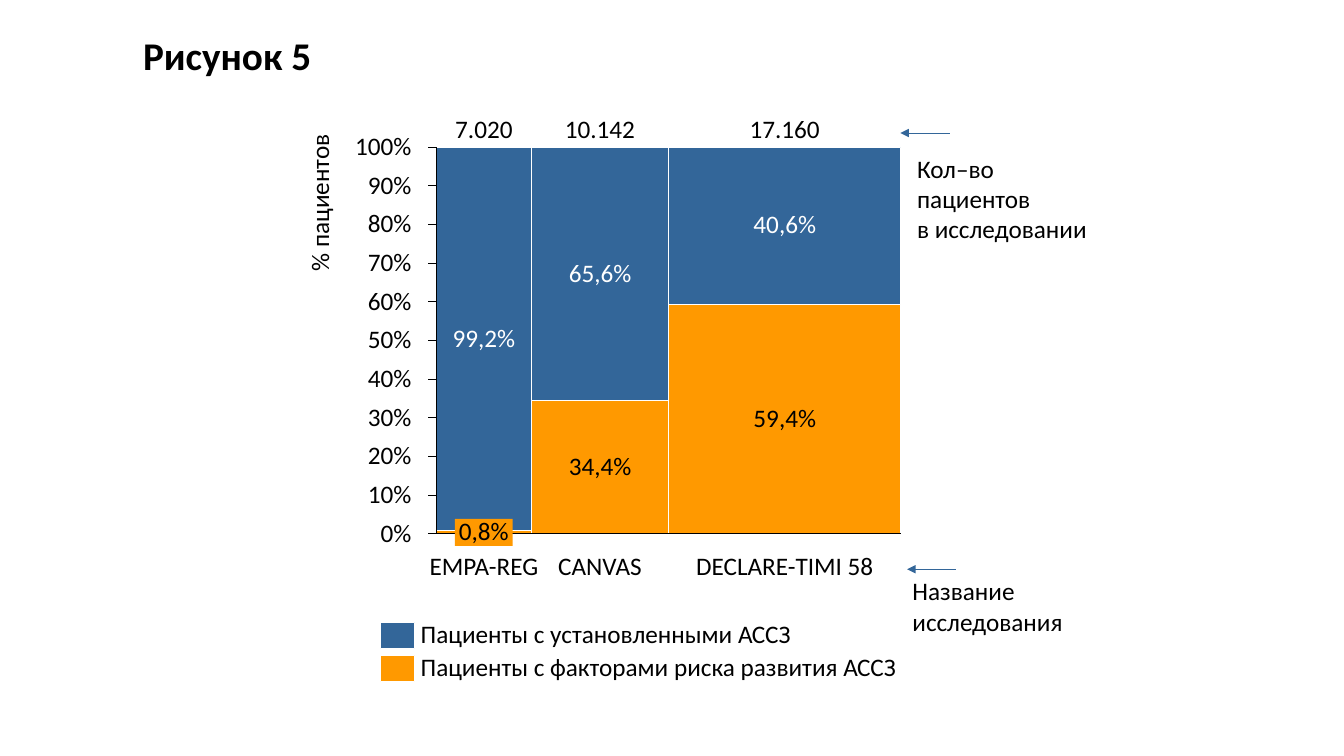
from dataclasses import dataclass

import pptx
import pptx.dml.color
import pptx.enum.shapes
import pptx.enum.text
import pptx.oxml.ns
import pptx.util
from lxml import etree

ALIGN = pptx.enum.text.PP_ALIGN
ANCHOR = pptx.enum.text.MSO_ANCHOR
qn = pptx.oxml.ns.qn

SLIDE_W = pptx.util.Inches(13.33)
SLIDE_H = pptx.util.Inches(7.5)


@dataclass(frozen=True)
class Theme:
    font: str = "Calibri"
    title_size: int = 28
    text_size: int = 18
    spacing: float = 0.9
    established: str = "336699"
    risk: str = "FF9900"
    ink: str = "000000"
    paper: str = "FFFFFF"
    thin: float = 0.5
    hairline: float = 0.75


THEME = Theme()

# Plot area and label sizes, in percent of the slide's width and height
PLOT_LEFT, PLOT_RIGHT = 32.47, 67.03
PLOT_TOP, PLOT_BOTTOM = 19.47, 70.63
PLOT_W, PLOT_H = PLOT_RIGHT - PLOT_LEFT, PLOT_BOTTOM - PLOT_TOP
TICK_LEFT, TICK_LABEL_RIGHT = 31.87, 30.62
ROW_H = 3.6
VALUE_W = 5.2

# Study, its label width, patients, share with risk factors, total label width
STUDIES = [
    ("EMPA-REG", 8.6, 7020, 0.8, 4.8),
    ("CANVAS", 7, 10142, 34.4, 5.8),
    ("DECLARE-TIMI 58", 14, 17160, 59.4, 5.8),
]


def across(share):
    return round(SLIDE_W * share / 100)


def down(share):
    return round(SLIDE_H * share / 100)


def box(left, top, width, height):
    return across(left), down(top), across(width), down(height)


def rgb(colour):
    return pptx.dml.color.RGBColor.from_string(colour)


def style(frame, color, align, size=THEME.text_size, spacing=THEME.spacing, bold=False):
    for paragraph in frame.paragraphs:
        paragraph.alignment = align
        paragraph.line_spacing = spacing
        for run in paragraph.runs:
            run.font.name = THEME.font
            run.font.size = pptx.util.Pt(size)
            run.font.bold = bold
            run.font.color.rgb = rgb(color)


def add_label(slide, text, place, align=ALIGN.CENTER, anchor=ANCHOR.MIDDLE,
              color=THEME.ink, fill=None, vertical=False):
    """One line of text without insets."""
    label = slide.shapes.add_textbox(*box(*place))
    frame = label.text_frame
    frame.text = text
    frame.word_wrap = False
    frame.vertical_anchor = anchor
    frame.margin_left = frame.margin_right = frame.margin_top = frame.margin_bottom = 0
    if fill:
        label.fill.solid()
        label.fill.fore_color.rgb = rgb(fill)
    if vertical:
        frame._txBody.find(qn("a:bodyPr")).set("vert", "vert270")
    style(frame, color, align)


def add_note(slide, text, place):
    """Wrapped explanation beside the chart."""
    frame = slide.shapes.add_textbox(*box(*place)).text_frame
    frame.text = text
    frame.word_wrap = True
    frame.auto_size = pptx.enum.text.MSO_AUTO_SIZE.SHAPE_TO_FIT_TEXT
    style(frame, THEME.ink, ALIGN.LEFT, spacing=1.0)


def add_block(slide, place, colour):
    block = slide.shapes.add_shape(pptx.enum.shapes.MSO_SHAPE.RECTANGLE, *box(*place))
    block.shadow.inherit = False
    block.fill.solid()
    block.fill.fore_color.rgb = rgb(colour)
    block.line.color.rgb = rgb(THEME.paper)
    block.line.width = pptx.util.Pt(THEME.hairline)


def add_line(slide, x1, y1, x2, y2, colour=THEME.ink, width=THEME.hairline, arrow=False):
    line = slide.shapes.add_connector(
        pptx.enum.shapes.MSO_CONNECTOR.STRAIGHT,
        across(x1), down(y1), across(x2), down(y2))
    line.line.color.rgb = rgb(colour)
    line.line.width = pptx.util.Pt(width)
    properties = line._element.spPr
    if arrow:
        etree.SubElement(properties.find(qn("a:ln")), qn("a:tailEnd"), type="triangle")
    etree.SubElement(properties, qn("a:effectLst"))


def add_title(slide, text):
    title = slide.shapes.title
    title.left, title.top, title.width, title.height = box(6.9, 5.3, 20, 5.8)
    frame = title.text_frame
    frame.text = text
    frame.word_wrap = True
    frame.auto_size = pptx.enum.text.MSO_AUTO_SIZE.NONE
    frame.vertical_anchor = ANCHOR.BOTTOM
    style(frame, THEME.ink, ALIGN.CENTER, THEME.title_size, bold=True)


def study_columns():
    """Each study with the left edge and width of its column."""
    total = sum(study[2] for study in STUDIES)
    left = PLOT_LEFT
    for study in STUDIES:
        width = PLOT_W * study[2] / total
        yield study, left, width
        left += width


def add_columns(slide):
    for (_, _, _, risk, _), left, width in study_columns():
        split = PLOT_BOTTOM - PLOT_H * risk / 100
        add_block(slide, (left, split, width, PLOT_BOTTOM - split), THEME.risk)
        add_block(slide, (left, PLOT_TOP, width, split - PLOT_TOP), THEME.established)


def add_axes(slide):
    add_line(slide, PLOT_LEFT, PLOT_BOTTOM, PLOT_RIGHT, PLOT_BOTTOM)
    add_line(slide, PLOT_LEFT, PLOT_BOTTOM, PLOT_LEFT, PLOT_TOP)
    for percent in range(0, 101, 10):
        level = PLOT_BOTTOM - PLOT_H * percent / 100
        text = f"{percent}%"
        width = 0.93 * len(text) + 0.47
        add_line(slide, TICK_LEFT, level, PLOT_LEFT, level)
        add_label(slide, text, (TICK_LABEL_RIGHT - width, level - ROW_H / 2, width, ROW_H),
                  ALIGN.RIGHT)
    add_label(slide, "% пациентов", (22.9, 17.75, 2, 18.1), ALIGN.RIGHT,
              ANCHOR.BOTTOM, vertical=True)


def add_column_labels(slide):
    for (name, name_w, patients, risk, total_w), left, width in study_columns():
        middle = left + width / 2
        split = PLOT_BOTTOM - PLOT_H * risk / 100

        def centred(text, top, label_w, **look):
            add_label(slide, text, (middle - label_w / 2, top, label_w, ROW_H), **look)

        centred(f"{patients:,}".replace(",", "."), 15.5, total_w, anchor=ANCHOR.BOTTOM)
        centred(name, 73.3, name_w, anchor=ANCHOR.TOP)
        centred(f"{100 - risk:.1f}%".replace(".", ","), (PLOT_TOP + split - ROW_H) / 2,
                VALUE_W, color=THEME.paper)
        # A sliver too low for its label gets a filled one
        sliver = PLOT_BOTTOM - split < ROW_H
        centred(f"{risk:.1f}%".replace(".", ","), (split + PLOT_BOTTOM - ROW_H) / 2,
                4.3 if sliver else VALUE_W, fill=THEME.risk if sliver else None)


def add_legend(slide):
    entries = [("Пациенты с установленными АССЗ", 27.6, THEME.established),
               ("Пациенты с факторами риска развития АССЗ", 35.5, THEME.risk)]
    for row, (text, width, colour) in enumerate(entries):
        top = 82.3 + row * 4.35
        add_block(slide, (28.28, top, 2.6, 3.5), colour)
        add_label(slide, text, (31.3, top, width, ROW_H), ALIGN.LEFT)


def add_explanations(slide):
    for text, place, (tip, end, level) in [
        ("Кол–во пациентов\nв исследовании", (67.5, 19.6, 15.6, 13.5), (67, 70.65, 17.6)),
        ("Название исследования", (67.15, 75.5, 15.6, 9.5), (67.5, 71.1, 75.3)),
    ]:
        add_note(slide, text, place)
        add_line(slide, end, level, tip, level, THEME.established, THEME.thin, arrow=True)


def main():
    deck = pptx.Presentation()
    deck.slide_width, deck.slide_height = SLIDE_W, SLIDE_H
    slide = deck.slides.add_slide(deck.slide_layouts.get_by_name("Title Only"))
    add_title(slide, "Рисунок 5")
    add_columns(slide)
    add_axes(slide)
    add_column_labels(slide)
    add_legend(slide)
    add_explanations(slide)
    deck.save("out.pptx")


if __name__ == "__main__":
    main()
